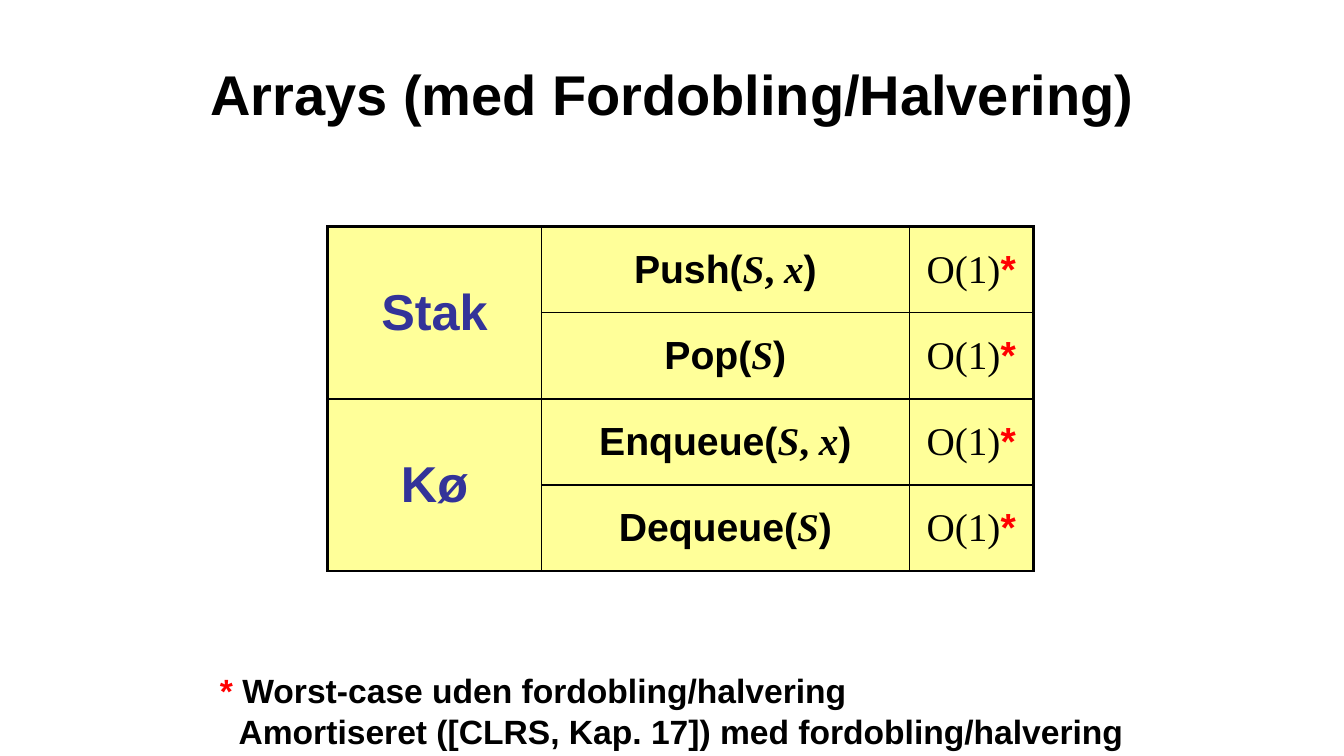
from lxml.etree import SubElement
from pptx import Presentation
from pptx.dml.color import RGBColor
from pptx.enum.text import MSO_ANCHOR as ANCHOR, PP_ALIGN as ALIGN
from pptx.oxml.ns import qn
from pptx.util import Pt

COLORS = {"text": "000000", "heading": "333399", "star": "FF0000",
          "cell": "FFFF99", "border": "000000"}
SANS, SERIF = "Arial", "Times New Roman"
THIN, THICK = 1, 2.25

# Each structure with its operations and their arguments
STRUCTURES = [
    ("Stak", [("Push", ["S", "x"]), ("Pop", ["S"])]),
    ("Kø", [("Enqueue", ["S", "x"]), ("Dequeue", ["S"])]),
]
COL_WIDTHS = [152.75, 262.75, 88.5]
ROW_HEIGHT = 61.5


def add_run(p, text, size, color="text", font=SANS, bold=True, italic=False):
    r = p.add_run()
    r.text = text
    r.font.size = Pt(size)
    r.font.name = font
    r.font.bold = bold
    r.font.italic = italic
    r.font.color.rgb = RGBColor.from_string(COLORS[color])


def add_textbox(slide, left, top, width, height, anchor=ANCHOR.TOP):
    box = slide.shapes.add_textbox(Pt(left), Pt(top), Pt(width), Pt(height))
    tf = box.text_frame
    tf.word_wrap = True
    tf.vertical_anchor = anchor
    return tf


def add_border(cell, side, width):
    ln = SubElement(cell._tc.get_or_add_tcPr(), qn(f"a:ln{side}"), w=str(Pt(width)))
    fill = SubElement(ln, qn("a:solidFill"))
    SubElement(fill, qn("a:srgbClr"), val=COLORS["border"])


def style_cell(table, row, col):
    """Style one cell, with thick borders on the table's edge; return its paragraph."""
    cell = table.cell(row, col)
    last_row = row + max(cell.span_height, 1) - 1
    outer = {"L": col == 0, "R": col == len(table.columns) - 1,
             "T": row == 0, "B": last_row == len(table.rows) - 1}
    for side, is_outer in outer.items():
        add_border(cell, side, THICK if is_outer else THIN)
    cell.fill.solid()
    cell.fill.fore_color.rgb = RGBColor.from_string(COLORS["cell"])
    cell.vertical_anchor = ANCHOR.MIDDLE
    cell.margin_left = cell.margin_right = Pt(7.2)
    cell.margin_top = cell.margin_bottom = Pt(0)
    p = cell.text_frame.paragraphs[0]
    p.alignment = ALIGN.CENTER
    return p


def add_operation(p, name, args):
    add_run(p, f"{name}(", 28)
    for i, arg in enumerate(args):
        if i:
            add_run(p, ", ", 28, font=SERIF)
        add_run(p, arg, 28, font=SERIF, italic=True)
    add_run(p, ")", 28)


def add_complexity(p):
    add_run(p, "O(1)", 28, font=SERIF, bold=False)
    add_run(p, "*", 28, "star")


def add_operations_table(slide):
    rows = sum(len(operations) for _, operations in STRUCTURES)
    frame = slide.shapes.add_table(rows, len(COL_WIDTHS), Pt(234), Pt(162),
                                   Pt(sum(COL_WIDTHS)), Pt(rows * ROW_HEIGHT))
    table = frame.table
    table.first_row = table.horz_banding = False
    for column, width in zip(table.columns, COL_WIDTHS):
        column.width = Pt(width)

    row = 0
    for structure, operations in STRUCTURES:
        table.cell(row, 0).merge(table.cell(row + len(operations) - 1, 0))
        add_run(style_cell(table, row, 0), structure, 36, "heading")
        for name, args in operations:
            add_operation(style_cell(table, row, 1), name, args)
            add_complexity(style_cell(table, row, 2))
            row += 1


def add_title(slide, text):
    p = add_textbox(slide, 120, 21.6, 720, 90, ANCHOR.MIDDLE).paragraphs[0]
    p.alignment = ALIGN.CENTER
    add_run(p, text, 40)


def add_footnote(slide, first, second):
    tf = add_textbox(slide, 150, 475.2, 660, 65.5)
    p = tf.paragraphs[0]
    add_run(p, "* ", 24, "star")
    add_run(p, first, 24)
    p = tf.add_paragraph()
    p._p.get_or_add_pPr().set("marL", str(Pt(13.33)))
    add_run(p, second, 24)


def main():
    prs = Presentation()
    prs.slide_width, prs.slide_height = Pt(960), Pt(540)
    slide = prs.slides.add_slide(prs.slide_layouts[6])

    add_title(slide, "Arrays (med Fordobling/Halvering)")
    add_operations_table(slide)
    add_footnote(slide, "Worst-case uden fordobling/halvering",
                 "Amortiseret ([CLRS, Kap. 17]) med fordobling/halvering")

    prs.save("out.pptx")


if __name__ == "__main__":
    main()
